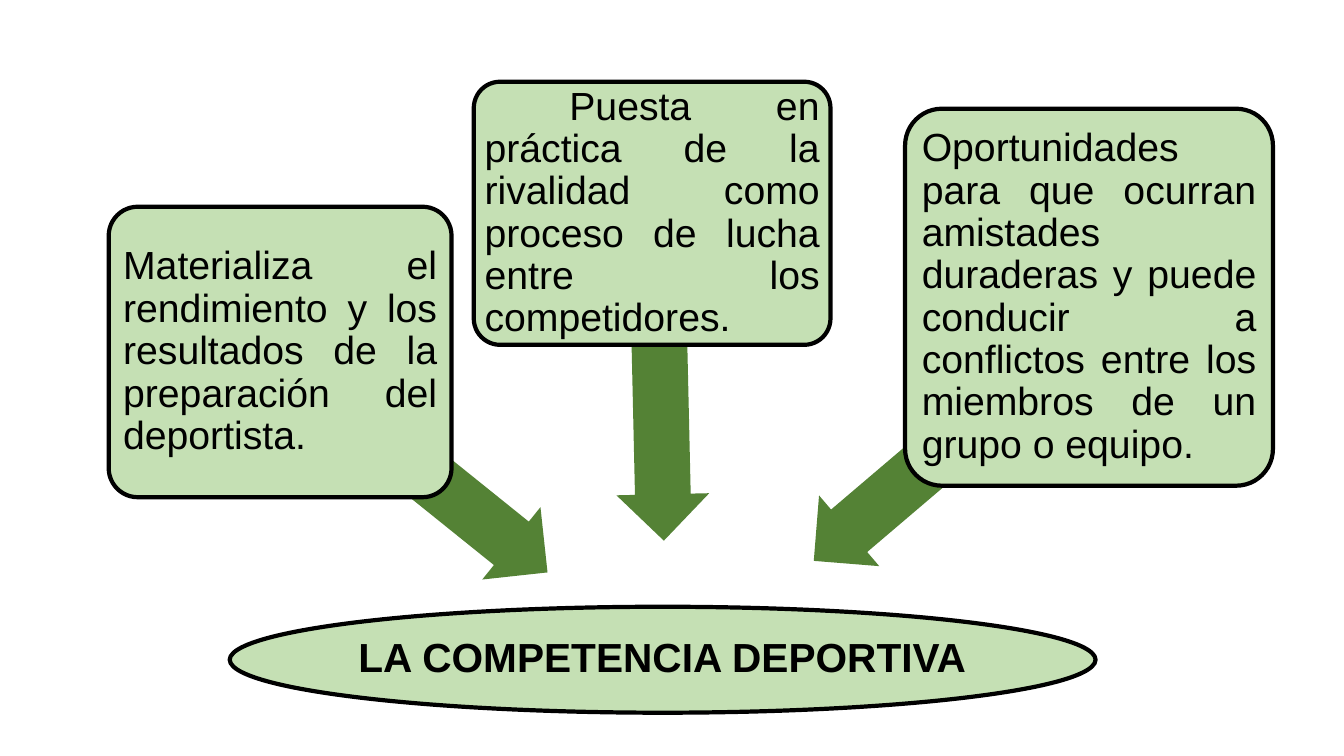
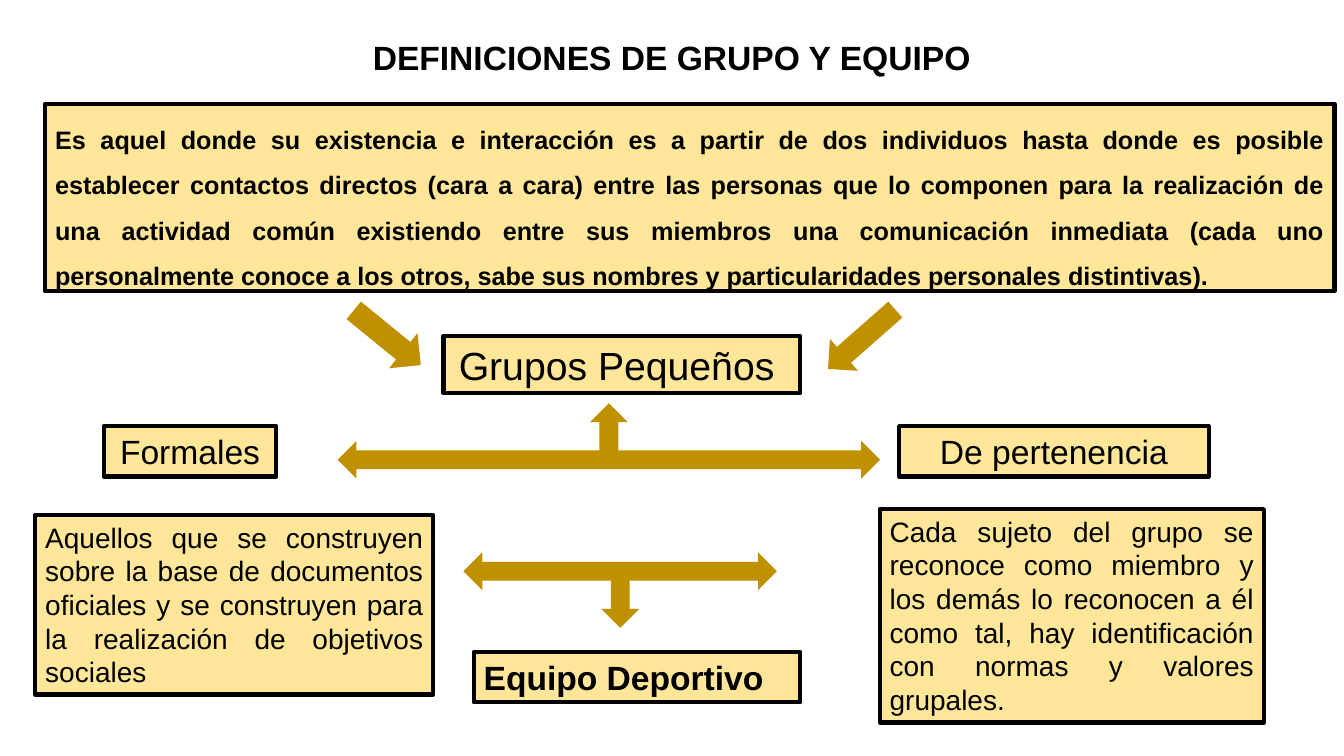
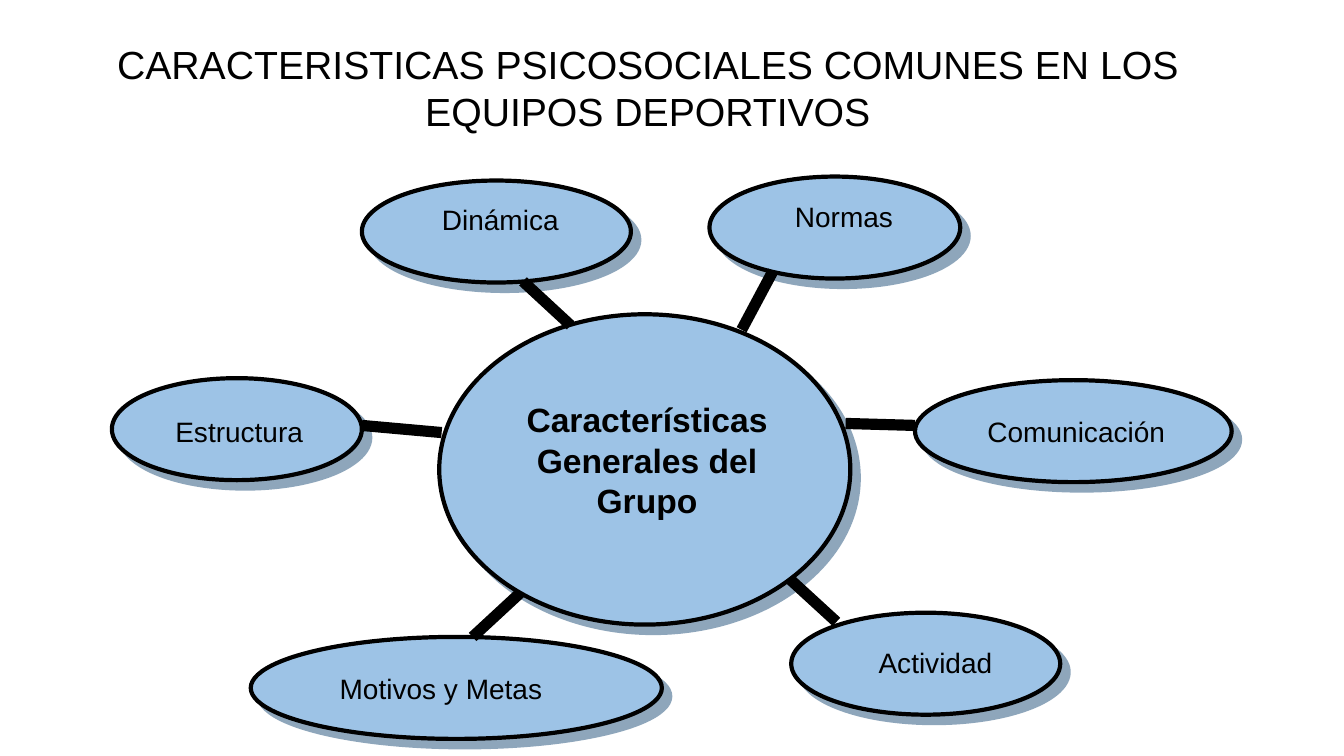
"""Builds three slides on sports competition, groups and teams."""
from lxml import etree
from pptx import Presentation
from pptx.dml.color import RGBColor
from pptx.enum.shapes import MSO_CONNECTOR, MSO_SHAPE
from pptx.enum.text import MSO_ANCHOR, MSO_AUTO_SIZE, PP_ALIGN
from pptx.oxml.ns import qn
from pptx.util import Cm, Pt

OVAL, RECT, ROUND = MSO_SHAPE.OVAL, MSO_SHAPE.RECTANGLE, MSO_SHAPE.ROUNDED_RECTANGLE
LEFT_ARROW, DOWN_ARROW = MSO_SHAPE.LEFT_ARROW, MSO_SHAPE.DOWN_ARROW
FORK = MSO_SHAPE.LEFT_RIGHT_UP_ARROW
LEFT, CENTER, JUSTIFY = PP_ALIGN.LEFT, PP_ALIGN.CENTER, PP_ALIGN.JUSTIFY
TOP, MIDDLE = MSO_ANCHOR.TOP, MSO_ANCHOR.MIDDLE
STRAIGHT = MSO_CONNECTOR.STRAIGHT
TITLE_ONLY, BLANK = 5, 6
COLORS = {
    "ink": "000000", "green": "C5E0B4", "moss": "548235", "cream": "FFE699",
    "gold": "BF9000", "sky": "9DC3E6", "shade": "1F4E79",
}


def color(name):
    return RGBColor.from_string(COLORS[name])


class Deck:
    def __init__(self):
        self.prs = Presentation()
        self.prs.slide_width, self.prs.slide_height = Cm(33.87), Cm(19.05)
        self.slide = None

    def start(self, layout):
        self.slide = self.prs.slides.add_slide(self.prs.slide_layouts[layout])

    def text(self, shape, words, size, align=CENTER, bold=False, anchor=TOP,
             inset=(0.25, 0.13), spacing=1.0, wrap=True):
        frame = shape.text_frame
        frame.word_wrap, frame.auto_size = wrap, MSO_AUTO_SIZE.NONE
        frame.vertical_anchor = anchor
        frame.margin_left = frame.margin_right = Cm(inset[0])
        frame.margin_top = frame.margin_bottom = Cm(inset[1])
        par = frame.paragraphs[0]
        par.text, par.alignment, par.line_spacing = words, align, spacing
        par.font.name, par.font.size, par.font.bold = "Arial", Pt(size), bold
        par.font.color.rgb = color("ink")

    def title(self, place, words, size, bold=False):
        self.start(TITLE_ONLY)
        head = self.slide.shapes.title
        head.left, head.top, head.width, head.height = map(Cm, place)
        self.text(head, words, size, bold=bold)

    def shape(self, kind, place, fill, outline=True):
        item = self.slide.shapes.add_shape(kind, *map(Cm, place))
        item.shadow.inherit = False
        item.fill.solid()
        item.fill.fore_color.rgb = color(fill)
        if outline:
            item.line.color.rgb = color("ink")
            item.line.width = Pt(3)
        else:
            item.line.fill.background()
        return item

    def box(self, kind, place, fill, words, size, **style):
        item = self.shape(kind, place, fill)
        if kind == ROUND:
            item.adjustments[0] = 0.1
        self.text(item, words, size, **style)

    def arrow(self, kind, place, fill, turn=0, adjust=()):
        item = self.shape(kind, place, fill, outline=False)
        item.rotation = turn
        for i, value in enumerate(adjust):
            item.adjustments[i] = value

    def bubble(self, place):
        item = self.shape(OVAL, place, "sky")
        effects = item._element.spPr.find(qn("a:effectLst"))
        shadow = etree.SubElement(effects, qn("a:outerShdw"), blurRad="0",
                                  dist=str(Pt(8.5)), dir="2700000",
                                  algn="ctr", rotWithShape="0")
        tint = etree.SubElement(shadow, qn("a:srgbClr"), val=COLORS["shade"])
        etree.SubElement(tint, qn("a:alpha"), val="50000")

    def label(self, place, words, size, **style):
        self.text(self.slide.shapes.add_textbox(*map(Cm, place)), words, size, **style)

    def line(self, ends):
        item = self.slide.shapes.add_connector(STRAIGHT, *map(Cm, ends))
        item.line.color.rgb = color("ink")
        item.line.width = Pt(8)
        etree.SubElement(item._element.spPr, qn("a:effectLst"))


def contest(deck):
    """Three ideas that point to sports competition."""
    deck.start(BLANK)
    deck.box(OVAL, (5.79, 15.29, 21.82, 2.67), "green", "LA COMPETENCIA DEPORTIVA", 29,
             bold=True, anchor=MIDDLE, inset=(0.05, 0.05), spacing=0.9, wrap=False)
    ideas = [
        ((9.19, 11.63, 5.18, 2.34), 218.8, (2.74, 5.21, 8.64, 7.32), 0.15,
         "Materializa el rendimiento y los resultados de la preparación del deportista."),
        ((11.94, 7.77, 9.37, 2.34), 268.7, (11.94, 2.06, 8.99, 6.63), 0.08,
         " Puesta en práctica de la rivalidad como proceso de lucha entre los competidores."),
        ((19.15, 9.27, 11.4, 2.34), 319.6, (22.81, 2.74, 9.27, 9.5), 0.15,
         "Oportunidades para que ocurran amistades duraderas y puede conducir a "
         "conflictos entre los miembros de un grupo o equipo."),
    ]
    for shaft, turn, place, inset, words in ideas:
        deck.arrow(LEFT_ARROW, shaft, "moss", turn, (0.6, 0.5))
        deck.box(ROUND, place, "green", words, 28, align=JUSTIFY, anchor=MIDDLE,
                 inset=(inset, inset), spacing=0.9)


def groups(deck):
    """Definitions of group and team."""
    deck.title((8, 0.81, 17.86, 2.31), "DEFINICIONES DE GRUPO Y EQUIPO", 24, bold=True)
    deck.box(RECT, (1.14, 2.62, 32.49, 4.72), "cream",
             "Es aquel donde su existencia e interacción es a partir de dos individuos "
             "hasta donde es posible establecer contactos directos (cara a cara) entre las "
             "personas que lo componen para la realización de una actividad común existiendo "
             "entre sus miembros una comunicación inmediata (cada uno personalmente conoce a "
             "los otros, sabe sus nombres y particularidades personales distintivas).",
             18, align=JUSTIFY, bold=True, spacing=1.5)
    cards = [
        ((11.18, 8.46, 8.99, 1.45), "Grupos Pequeños ", 28, CENTER, False),
        ((2.62, 10.74, 4.34, 1.27), "Formales", 24, CENTER, False),
        ((22.66, 10.74, 7.8, 1.27), "De pertenencia", 24, CENTER, False),
        ((0.89, 12.98, 10.03, 4.52),
         "Aquellos que se construyen sobre la base de documentos oficiales y se construyen "
         "para la realización de objetivos sociales", 20, JUSTIFY, False),
        ((22.17, 12.83, 9.68, 5.38),
         "Cada sujeto del grupo se reconoce como miembro y los demás lo reconocen a él como "
         "tal, hay identificación con normas y valores grupales.", 20, JUSTIFY, False),
        ((11.94, 16.43, 8.23, 1.27), "Equipo Deportivo", 24, LEFT, True),
    ]
    for place, words, size, align, bold in cards:
        deck.box(RECT, place, "cream", words, size, align=align, bold=bold)
    arrows = [
        (DOWN_ARROW, (21.18, 7.42, 1.07, 2.26), 48.6),
        (DOWN_ARROW, (9.19, 7.42, 1.14, 2.18), 309.2),
        (FORK, (8.51, 10.16, 13.67, 1.9), 0),
        (FORK, (11.68, 13.92, 7.9, 1.9), 180),
    ]
    for kind, place, turn in arrows:
        deck.arrow(kind, place, "gold", turn)


def traits(deck):
    """Psychosocial traits around the group."""
    deck.title((0.36, 0.89, 31.93, 2.64),
               "CARACTERISTICAS PSICOSOCIALES COMUNES EN LOS EQUIPOS DEPORTIVOS", 28)
    deck.bubble((11.07, 7.92, 10.36, 7.82))
    deck.label((12.52, 9.93, 7.57, 3.76), "Características Generales del Grupo", 24, bold=True)
    nodes = [
        ("Estructura", (2.82, 9.53, 6.3), (3.91, 10.31, 4.24), CENTER,
         (11.13, 10.9, 9.12, 10.72)),
        ("Comunicación", (23.06, 9.58, 7.98), (24.28, 10.31, 5.69), CENTER,
         (21.31, 10.67, 23.06, 10.72)),
        ("Dinámica", (9.12, 4.55, 6.78), (10.54, 4.98, 4.14), CENTER,
         (13.18, 7.09, 14.38, 8.2)),
        ("Normas", (17.88, 4.45, 6.32), (19.48, 4.9, 3.58), CENTER,
         (19.48, 6.83, 18.69, 8.31)),
        ("Motivos y Metas", (6.32, 16.05, 10.36), (8.31, 16.79, 7.19), LEFT,
         (13.11, 14.94, 11.91, 16.05)),
        ("Actividad", (19.94, 15.44, 6.78), (21.29, 16.13, 4.57), CENTER,
         (19.89, 14.58, 21.08, 15.67)),
    ]
    for words, place, spot, align, ends in nodes:
        deck.bubble((*place, 2.57))
        deck.label((*spot, 1), words, 20, align=align)
        deck.line(ends)


def main():
    deck = Deck()
    contest(deck)
    groups(deck)
    traits(deck)
    deck.prs.save("out.pptx")


if __name__ == "__main__":
    main()
